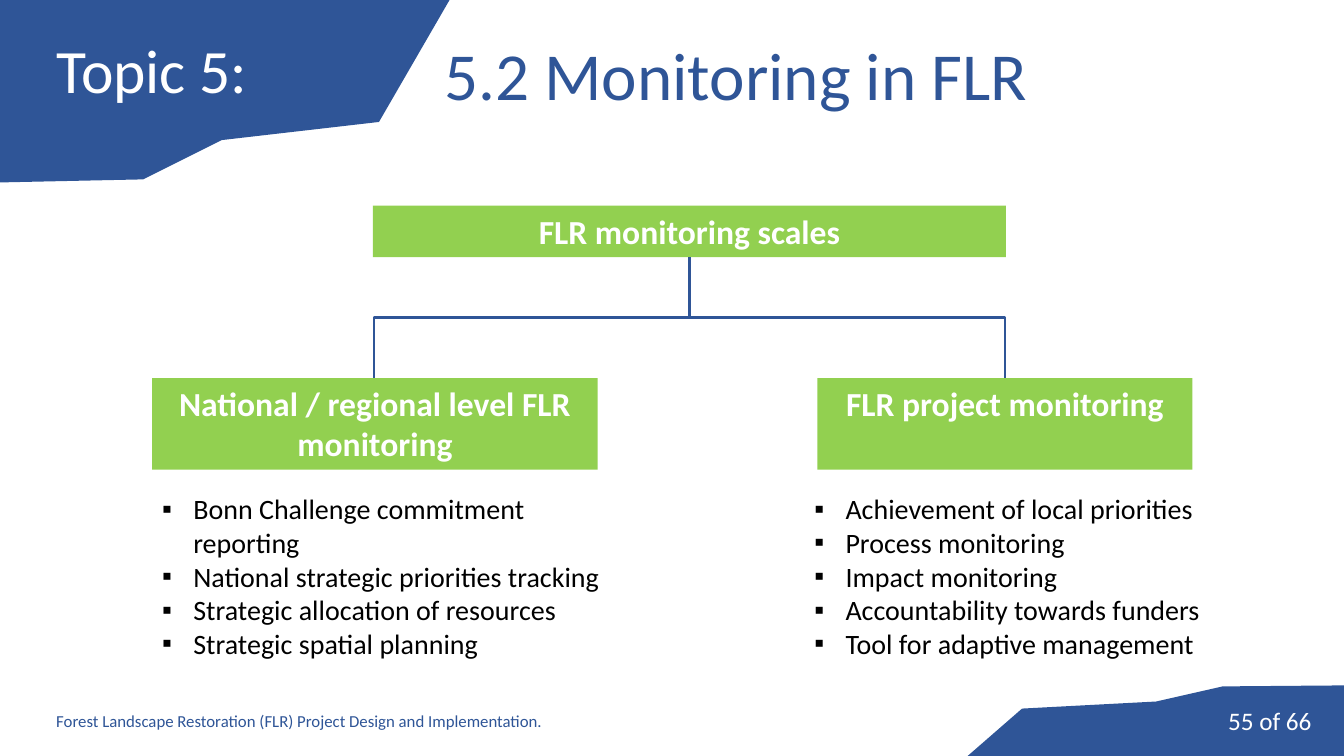
from dataclasses import dataclass

from lxml.etree import SubElement
from pptx import Presentation
from pptx.dml.color import RGBColor
from pptx.enum.shapes import MSO_CONNECTOR, MSO_SHAPE
from pptx.enum.text import MSO_ANCHOR, MSO_AUTO_SIZE, PP_ALIGN
from pptx.oxml.ns import qn
from pptx.util import Emu, Inches, Pt

# Grid: square cells of a tenth of an inch
CELL = Inches(0.1)
COLUMNS, ROWS = 133.33, 75
BLUE, GREEN, WHITE, BLACK = "2F5597", "92D050", "FFFFFF", "000000"
FONT = "Calibri"


@dataclass(frozen=True)
class Area:
    column: float
    row: float
    columns: float
    rows: float

    def lengths(self) -> tuple:
        return tuple(grid(n) for n in (self.column, self.row, self.columns, self.rows))


@dataclass(frozen=True)
class Style:
    size: float
    color: str
    bold: bool = False
    align: PP_ALIGN = PP_ALIGN.LEFT
    anchor: MSO_ANCHOR = MSO_ANCHOR.TOP
    bullet: str = ""
    line_spacing: float = 1.0


@dataclass(frozen=True)
class Scale:
    heading: str
    heading_area: Area
    branch_column: float
    list_area: Area
    items: tuple


ROOT = Area(37, 20.4, 62.8, 5.1)
ROOT_CENTER = 68.4
BRANCH_ROW = 37.5
HEADING = Style(24, WHITE, bold=True, align=PP_ALIGN.CENTER)
BULLETS = Style(20, BLACK, bullet="▪")

SCALES = (
    Scale("National / regional level FLR monitoring",
          Area(15.1, BRANCH_ROW, 44.2, 9.1), 37.1, Area(15.1, 48.3, 45.6, 17.8),
          ("Bonn Challenge commitment reporting",
           "National strategic priorities tracking",
           "Strategic allocation of resources",
           "Strategic spatial planning")),
    Scale("FLR project monitoring",
          Area(81.1, BRANCH_ROW, 37.2, 9.1), 99.7, Area(79.8, 48.3, 43.3, 17.8),
          ("Achievement of local priorities",
           "Process monitoring",
           "Impact monitoring",
           "Accountability towards funders",
           "Tool for adaptive management")),
)

TOP_BANNER = ((0, 0), (44.6, 0), (37.6, 12.1), (22, 13.9), (14.2, 17.8), (0, 18.1))
BOTTOM_BANNER = ((COLUMNS, ROWS), (96, ROWS), (101.4, 70.3), (114.7, 69.6),
                 (121.3, 68.1), (COLUMNS, 68))


def grid(cells: float) -> Emu:
    return Emu(round(cells * CELL))


def color(value: str) -> RGBColor:
    return RGBColor.from_string(value)


def add_bullet(para, mark: str) -> None:
    properties = para._p.get_or_add_pPr()
    indent = Inches(0.31)
    properties.set("marL", str(indent))
    properties.set("indent", str(-indent))
    bullet_color = SubElement(properties, qn("a:buClr"))
    SubElement(bullet_color, qn("a:srgbClr")).set("val", BLACK)
    SubElement(properties, qn("a:buFont")).set("typeface", "Arial")
    SubElement(properties, qn("a:buChar")).set("char", mark)


def write(box, lines: tuple, style: Style) -> None:
    frame = box.text_frame
    frame.word_wrap = True
    frame.auto_size = MSO_AUTO_SIZE.NONE
    frame.vertical_anchor = style.anchor
    for index, line in enumerate(lines):
        para = frame.paragraphs[0] if index == 0 else frame.add_paragraph()
        para.alignment = style.align
        para.line_spacing = style.line_spacing
        if style.bullet:
            add_bullet(para, style.bullet)
        span = para.add_run()
        span.text = line
        span.font.name = FONT
        span.font.size = Pt(style.size)
        span.font.bold = style.bold
        span.font.color.rgb = color(style.color)


def add_text(page, area: Area, lines: tuple, style: Style) -> None:
    write(page.shapes.add_textbox(*area.lengths()), lines, style)


def paint(shape, fill: str) -> None:
    shape.shadow.inherit = False
    shape.fill.solid()
    shape.fill.fore_color.rgb = color(fill)
    shape.line.fill.background()


def add_banner(page, points: tuple) -> None:
    corners = [(grid(x), grid(y)) for x, y in points]
    builder = page.shapes.build_freeform(*corners[0], scale=1.0)
    builder.add_line_segments(corners[1:], close=True)
    paint(builder.convert_to_shape(), BLUE)


def add_heading(page, area: Area, text: str) -> None:
    box = page.shapes.add_shape(MSO_SHAPE.RECTANGLE, *area.lengths())
    paint(box, GREEN)
    write(box, (text,), HEADING)


def add_branch(page, end_column: float) -> None:
    """Draw an elbow that leaves the root downwards, as a quarter-turned connector."""
    start_row = ROOT.row + ROOT.rows
    middle_column = (ROOT_CENTER + end_column) / 2
    middle_row = (start_row + BRANCH_ROW) / 2
    half_span = abs(end_column - ROOT_CENTER) / 2
    to_right = end_column > ROOT_CENTER
    half_drop = (BRANCH_ROW - start_row) / 2 * (1 if to_right else -1)
    branch = page.shapes.add_connector(
        MSO_CONNECTOR.ELBOW,
        grid(middle_column + half_drop), grid(middle_row - half_span),
        grid(middle_column - half_drop), grid(middle_row + half_span))
    branch.line.color.rgb = color(BLUE)
    branch.line.width = Pt(2)
    properties = branch._element.spPr
    properties.find(qn("a:xfrm")).set("rot", str((270 if to_right else 90) * 60000))
    SubElement(properties, qn("a:effectLst"))


def main() -> None:
    deck = Presentation()
    deck.slide_width, deck.slide_height = grid(COLUMNS), grid(ROWS)
    page = deck.slides.add_slide(deck.slide_layouts[5])

    # Corner banners
    for points in (TOP_BANNER, BOTTOM_BANNER):
        add_banner(page, points)

    # Title, raised above the banner
    title = page.shapes.title
    title.left, title.top, title.width, title.height = Area(4.6, 0, 46.4, 14.5).lengths()
    write(title, ("Topic 5:",),
          Style(44, WHITE, anchor=MSO_ANCHOR.MIDDLE, line_spacing=0.9))
    page.shapes._spTree.append(title._element)
    add_text(page, Area(43.1, 2.8, 82.4, 9.1), ("5.2 Monitoring in FLR",), Style(48, BLUE))

    # Tree of monitoring scales
    add_heading(page, ROOT, "FLR monitoring scales")
    for scale in SCALES:
        add_branch(page, scale.branch_column)
        add_heading(page, scale.heading_area, scale.heading)
        add_text(page, scale.list_area, scale.items, BULLETS)

    # Footer and page count
    add_text(page, Area(4.6, 69.5, 80, 4),
             ("Forest Landscape Restoration (FLR) Project Design and Implementation.",),
             Style(12, BLUE, anchor=MSO_ANCHOR.MIDDLE))
    add_text(page, Area(117.3, 69.5, 13.8, 4), ("55 of 66",),
             Style(18, WHITE, align=PP_ALIGN.RIGHT, anchor=MSO_ANCHOR.MIDDLE))

    deck.save("out.pptx")


if __name__ == "__main__":
    main()
